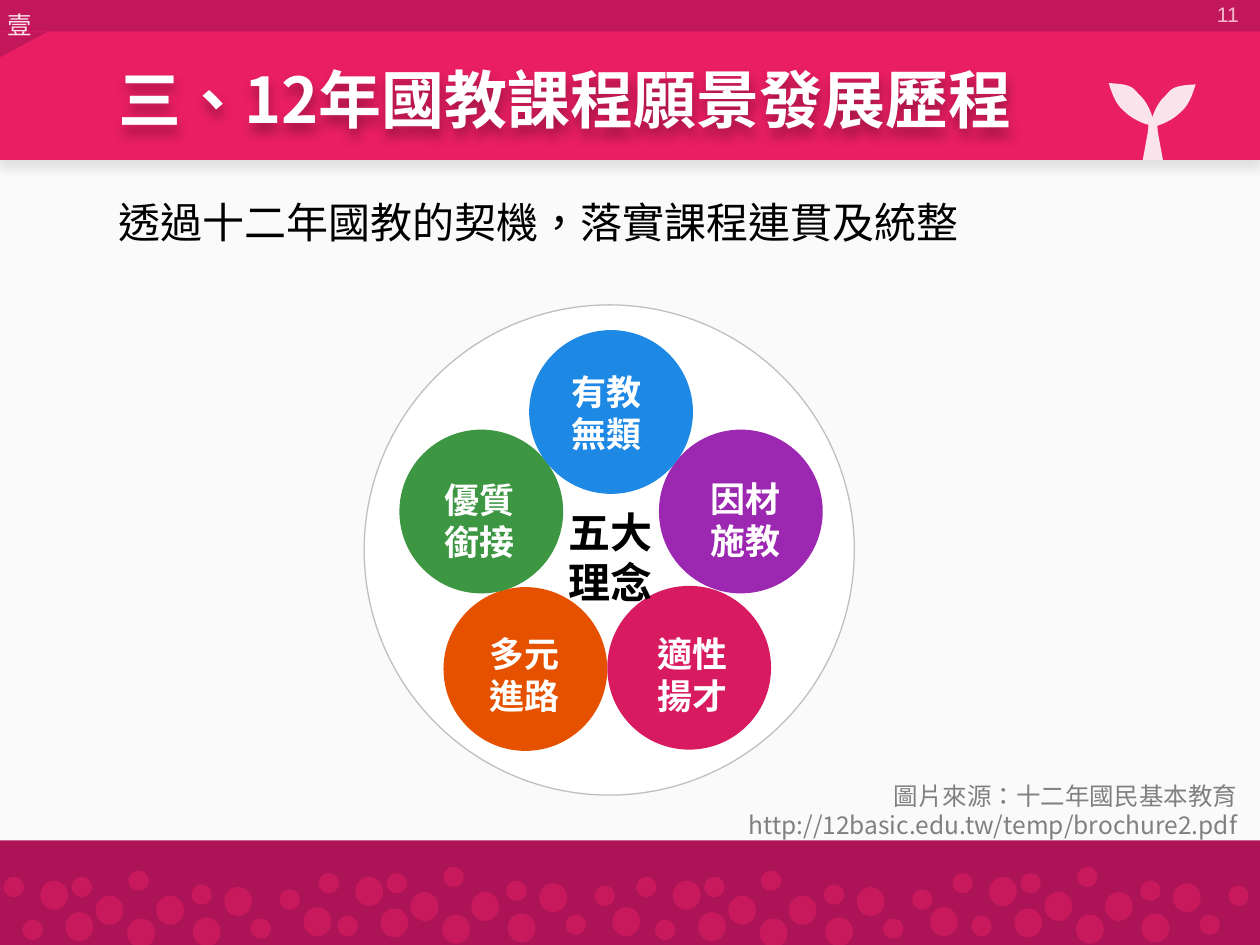
from lxml import etree
from pptx import Presentation
from pptx import util as u
from pptx.dml.color import RGBColor
from pptx.enum import shapes, text
from pptx.oxml.ns import qn

PX = 9144
CJK = "Noto Sans CJK SC"
RECT = shapes.MSO_SHAPE.RECTANGLE
DOT = shapes.MSO_SHAPE.FLOWCHART_CONNECTOR
LEFT, RIGHT = text.PP_ALIGN.LEFT, text.PP_ALIGN.RIGHT
TOP, MIDDLE = text.MSO_ANCHOR.TOP, text.MSO_ANCHOR.MIDDLE

prs = Presentation()
prs.slide_width, prs.slide_height = 1000 * PX, 750 * PX
s = prs.slides.add_slide(prs.slide_layouts[6])


def paint(sp, color):
    sp.shadow.inherit = False
    sp.fill.solid()
    sp.fill.fore_color.rgb = RGBColor.from_string(color)
    sp.line.fill.background()
    return sp


def label(lines, box, size, color, bold=False, align=LEFT, anchor=TOP, wrap=False, font=CJK):
    sp = s.shapes.add_textbox(*(v * PX for v in box))
    tf = sp.text_frame
    tf.word_wrap, tf.vertical_anchor = wrap, anchor
    for i, line in enumerate(lines):
        p = tf.paragraphs[0] if i == 0 else tf.add_paragraph()
        p.alignment, p.line_spacing = align, u.Pt(round(size * 1.2, 1))
        r = p.add_run()
        r.text = line
        for key, value in {"name": font, "size": u.Pt(size), "bold": bold}.items():
            setattr(r.font, key, value)
        r.font.color.rgb = RGBColor.from_string(color)
        rpr = r.font._element
        rpr.set("lang", "zh-TW")
        ea = etree.Element(qn("a:ea"), typeface=font)
        rpr.find(qn("a:latin")).addnext(ea)
    return sp


panels = [
    (-1, 44, 1003, 706, "FAFAFA"),
    (-1, 0, 1001, 127, "E91E63"),
    (-1, -2, 1001, 27, "C2185B"),
    (0, 667, 1000, 83, "AD1457"),
]
for *box, color in panels:
    sp = paint(s.shapes.add_shape(RECT, *(v * PX for v in box)), color)
    if color == "E91E63":
        band = sp

leaf = [
    (915, 99),
    [(917, 96), (911, 81), (905, 76)],
    [(899, 70), (900, 67), (880, 66)],
    [(884, 79), (887, 84), (893, 89)],
    [(899, 95), (913, 101), (915, 99)],
]
left_leaf = [leaf[0]]
for c1, c2, end in leaf[1:]:
    start = left_leaf[-1]
    for step in range(1, 13):
        t = step / 12
        weights = ((1 - t) ** 3, 3 * t * (1 - t) ** 2, 3 * t * t * (1 - t), t ** 3)
        left_leaf.append(tuple(
            sum(w * v for w, v in zip(weights, axis)) for axis in zip(start, c1, c2, end)
        ))
right_leaf = [(1829 - x, y + 1) for x, y in left_leaf]
stem = [(912, 94), (918, 94), (919, 105), (923, 127), (907, 127), (911, 105)]
fold = [(-1, 25), (-1, 46), (38, 25)]

for points, color in [(fold, "C2185B"), (left_leaf, "FCE4EC"), (stem, "FCE4EC"), (right_leaf, "FCE4EC")]:
    points = [(round(x * PX), round(y * PX)) for x, y in points]
    fb = s.shapes.build_freeform(*points[0])
    fb.add_line_segments(points[1:], close=True)
    paint(fb.convert_to_shape(), color)

ring = paint(s.shapes.add_shape(DOT, 289 * PX, 242 * PX, 389 * PX, 389 * PX), "FFFFFF")
ring.line.color.rgb = RGBColor.from_string("BFBFBF")
ring.line.width = u.Pt(0.75)

ideas = [
    (352, 466, "E65100", ["多元", "進路"], 379, 495),
    (523, 341, "9C27B0", ["因材", "施教"], 554, 372),
    (317, 341, "3D9641", ["優質", "銜接"], 343, 373),
    (420, 262, "1E88E5", ["有教", "無類"], 444, 287),
    (482, 465, "D81B60", ["適性", "揚才"], 512, 495),
]
for x, y, color, *_ in ideas:
    paint(s.shapes.add_shape(DOT, x * PX, y * PX, 130 * PX, 130 * PX), color)
for *_, lines, x, y in ideas:
    label(lines, (x, y + 2, 76, 77), 20, "FFFFFF", bold=True)
label(["五大", "理念"], (441, 397, 88, 91), 24, "000000", bold=True)

large = [(49, 721), (73, 708), (98, 726), (121, 708), (150, 725), (175, 701), (29, 696)]
small = [(149, 699), (15, 727), (54, 693), (0, 693), (99, 688), (196, 726), (219, 703)]
dots = [(x, 720, 22, 23) for x in (241, 486, 738)]
for dx, dy in [(3, 3), (253, 0), (505, 3), (756, 0)]:
    dots += [(x + dx, y + dy, 22, 23) for x, y in large]
    dots += [(x + dx, y + dy, 16, 16) for x, y in small]
for box in dots:
    paint(s.shapes.add_shape(DOT, *(v * PX for v in box)), "C8195D")

label(["壹"], (-4, 3, 40, 34), 14, "FCE4EC")
label(["11"], (760, -9, 233, 40), 12, "F8BBD0", align=RIGHT, anchor=MIDDLE, wrap=True, font="Arial")
title = label(["三、12年國教課程願景發展歷程"], (84, 25, 916, 106), 36, "FFFFFF",
              bold=True, anchor=MIDDLE, wrap=True)
label(["透過十二年國教的契機，落實課程連貫及統整"], (84, 151, 916, 50), 24, "000000", wrap=True)
label(["圖片來源：十二年國民基本教育", "http://12basic.edu.tw/temp/brochure2.pdf"],
      (571, 615, 421, 57), 14, "808080", align=RIGHT, wrap=True)

for sp, alpha in [(band, 10), (title, 30)]:
    sp.shadow.inherit = False
    effects = sp._element.spPr.find(qn("a:effectLst"))
    shadow = etree.SubElement(effects, qn("a:outerShdw"), blurRad=str(u.Pt(6)),
                              dist=str(u.Pt(4)), dir="5400000", algn="t", rotWithShape="0")
    tint = etree.SubElement(shadow, qn("a:srgbClr"), val="000000")
    etree.SubElement(tint, qn("a:alpha"), val=str(alpha * 1000))

prs.save("out.pptx")
